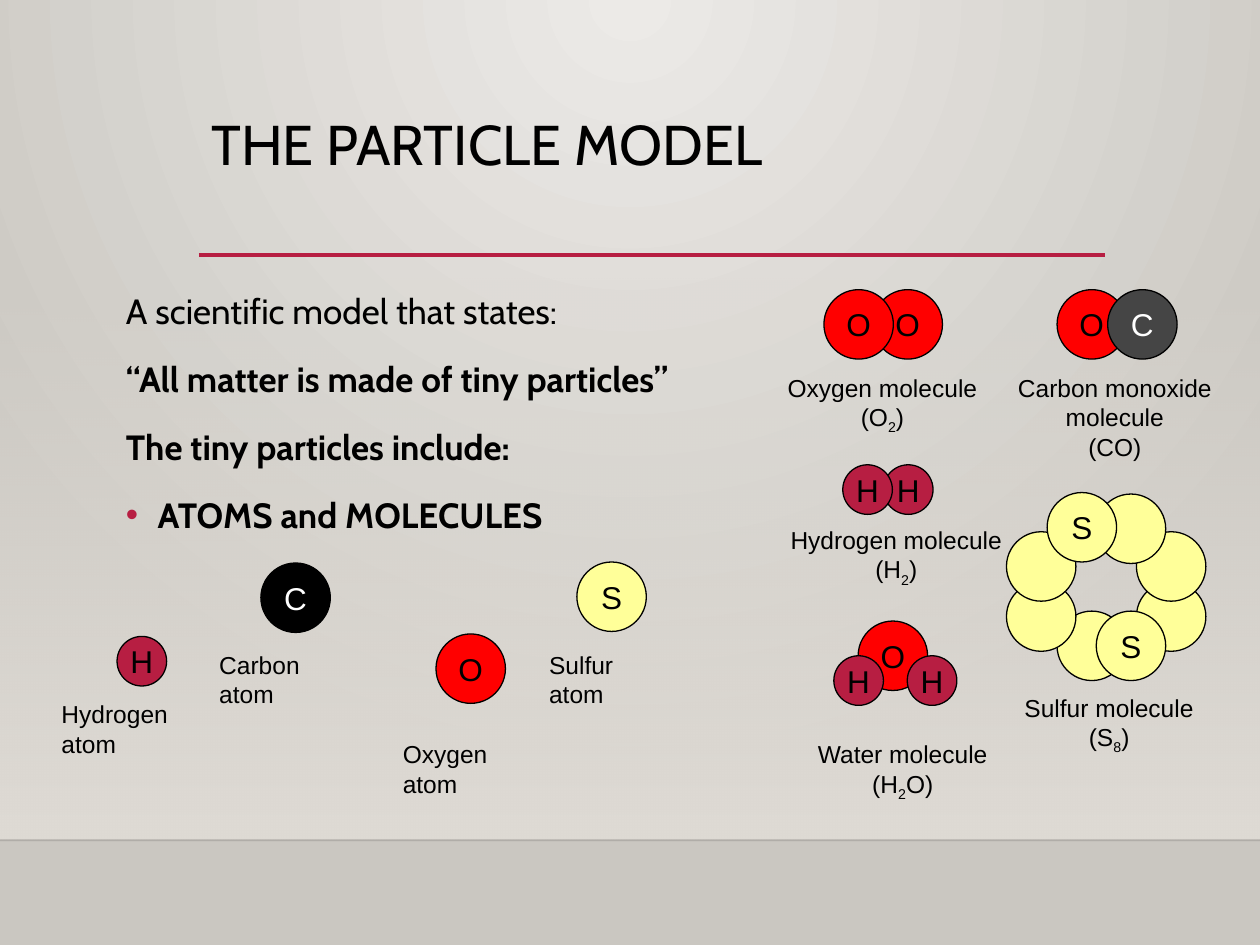
from dataclasses import dataclass

from pptx import Presentation
from pptx import util as u
from pptx.dml.color import RGBColor
from pptx.enum import shapes, text
from pptx.oxml import parse_xml
from pptx.oxml.ns import nsdecls, qn


@dataclass(frozen=True)
class Theme:
    ink: str = "000000"
    white: str = "FFFFFF"
    accent: str = "B71E42"
    red: str = "FF0000"
    yellow: str = "FFFF99"
    charcoal: str = "454545"
    glow: str = "ECEAE7"
    wall: str = "CAC7C1"
    floor: str = "DFDBD5"
    heading_font: str = "Cabin"
    label_font: str = "Arial"
    title_size: int = 32
    body_size: int = 20
    symbol_size: int = 18
    label_size: int = 14


@dataclass(frozen=True)
class Box:
    left: float
    top: float
    width: float
    height: float

    def lengths(self):
        return [u.Cm(value) for value in (self.left, self.top, self.width, self.height)]


@dataclass(frozen=True)
class Atom:
    symbol: str
    fill: str
    diameter: float = 1.4
    ink: str = "000000"


THEME = Theme()
HYDROGEN = Atom("H", THEME.accent, 1.0)
OXYGEN = Atom("O", THEME.red)
SULFUR = Atom("S", THEME.yellow)
PLAIN_SULFUR = Atom("", THEME.yellow)
CARBON = Atom("C", THEME.ink, ink=THEME.white)
BOUND_CARBON = Atom("C", THEME.charcoal, ink=THEME.white)

LEFT, CENTER = text.PP_ALIGN.LEFT, text.PP_ALIGN.CENTER
LINE_HEIGHT = 0.58
LABEL_PADDING = 0.29

FREE_ATOMS = [
    (Box(0.99, 12.83, 3.89, 2.59), HYDROGEN, 1.37, "Hydrogen atom"),
    (Box(4.17, 11.35, 3.35, 3.08), CARBON, 1.09, "Carbon atom"),
    (Box(7.87, 12.78, 3.43, 3.45), OXYGEN, 0.92, "Oxygen atom"),
    (Box(10.82, 11.33, 3.02, 3.1), SULFUR, 0.81, "Sulfur atom"),
]

MOLECULES = [
    (Box(15.29, 5.84, 5, 3), [(OXYGEN, 2.31, 0), (OXYGEN, 1.32, 0)],
     [["Oxygen molecule"], ["(O", "2", ")"]], 2),
    (Box(19.55, 5.84, 5.85, 3.58), [(OXYGEN, 1.76, 0), (BOUND_CARBON, 2.78, 0)],
     [["Carbon monoxide molecule"], ["(CO)"]], 3),
    (Box(15.57, 9.37, 5, 2.54), [(HYDROGEN, 2.24, 0), (HYDROGEN, 1.42, 0)],
     [["Hydrogen molecule"], ["(H", "2", ")"]], 2),
    (Box(16.03, 12.52, 4.34, 3.71),
     [(OXYGEN, 1.27, 0), (HYDROGEN, 0.78, 0.7), (HYDROGEN, 2.26, 0.7)],
     [["Water molecule"], ["(H", "2", "O)"]], 2),
    (Box(19.86, 9.93, 5, 5.36),
     [(PLAIN_SULFUR, 1.45, 2.39), (PLAIN_SULFUR, 3.05, 1.8), (SULFUR, 2.24, 2.39),
      (PLAIN_SULFUR, 0.43, 1.8), (PLAIN_SULFUR, 3.05, 0.79), (PLAIN_SULFUR, 2.24, 0.03),
      (PLAIN_SULFUR, 0.43, 0.79), (SULFUR, 1.25, 0)],
     [["Sulfur molecule"], ["(S", "8", ")"]], 2),
]

STATEMENTS = [
    ("A scientific model that states:", False),
    ("“All matter is made of tiny particles”", True),
    ("The tiny particles include:", True),
    ("ATOMS and MOLECULES", True),
]


def color(value):
    return RGBColor.from_string(value)


def add_span(para, words, font, size, ink=THEME.ink, bold=False):
    span = para.add_run()
    span.text = words
    span.font.name = font
    span.font.size = u.Pt(size)
    span.font.color.rgb = color(ink)
    span.font.bold = bold
    return span


def add_text_frame(page, box):
    frame = page.shapes.add_textbox(*box.lengths()).text_frame
    frame.word_wrap = True
    return frame


def paragraphs(frame, count):
    return [frame.paragraphs[0]] + [frame.add_paragraph() for _ in range(count - 1)]


def set_gradient(holder, stops, shade):
    marks = "".join(
        f'<a:gs pos="{place * 1000}"><a:srgbClr val="{value}">'
        f'<a:alpha val="{alpha * 1000}"/></a:srgbClr></a:gs>'
        for place, value, alpha in stops)
    gradient = parse_xml(
        f'<a:gradFill {nsdecls("a")} rotWithShape="1"><a:gsLst>{marks}</a:gsLst>{shade}</a:gradFill>')
    holder.replace(holder.find(qn("a:solidFill")), gradient)


def add_rule(page, left, right, top, ink, width):
    rule = page.shapes.add_connector(
        shapes.MSO_CONNECTOR.STRAIGHT, u.Cm(left), u.Cm(top), u.Cm(right), u.Cm(top))
    rule.line.color.rgb = color(ink)
    rule.line.width = u.Pt(width)
    rule._element.spPr.append(parse_xml(f'<a:effectLst {nsdecls("a")}/>'))
    return rule


def add_backdrop(page, box):
    page.background.fill.solid()
    set_gradient(
        page.element.find(".//" + qn("p:bgPr")),
        [(0, THEME.glow, 100), (100, THEME.wall, 100)],
        '<a:path path="circle"><a:fillToRect l="43000" t="0" r="43000" b="100000"/></a:path>')
    band = page.shapes.add_shape(shapes.MSO_SHAPE.RECTANGLE, *box.lengths())
    band.shadow.inherit = False
    band.line.fill.background()
    band.fill.solid()
    set_gradient(band._element.spPr, [(0, THEME.floor, 0), (100, THEME.floor, 100)],
                 '<a:lin ang="5400000" scaled="0"/>')
    edge = add_rule(page, box.left, box.left + box.width, box.top + box.height, THEME.ink, 1)
    tint = edge._element.find(".//" + qn("a:ln")).find(".//" + qn("a:srgbClr"))
    tint.append(parse_xml(f'<a:alpha {nsdecls("a")} val="20000"/>'))


def add_title(page, box):
    para = add_text_frame(page, box).paragraphs[0]
    para.line_spacing = 0.9
    add_span(para, "THE PARTICLE MODEL", THEME.heading_font, THEME.title_size)
    add_rule(page, box.left, box.left + box.width, box.top + box.height, THEME.accent, 2.5)


def add_statements(page, box):
    frame = add_text_frame(page, box)
    paras = paragraphs(frame, len(STATEMENTS))
    for index, (para, (words, bold)) in enumerate(zip(paras, STATEMENTS)):
        para.line_spacing = 1.2
        para.space_before = u.Pt(10 if index else 0)
        add_span(para, words, THEME.heading_font, THEME.body_size, bold=bold)
    layout = paras[-1]._p.get_or_add_pPr()
    layout.set("marL", str(u.Cm(0.64)))
    layout.set("indent", str(-u.Cm(0.64)))
    layout.append(parse_xml(
        f'<a:buClr {nsdecls("a")}><a:srgbClr val="{THEME.accent}"/></a:buClr>'))
    layout.append(parse_xml(f'<a:buFont {nsdecls("a")} typeface="Arial"/>'))
    layout.append(parse_xml(f'<a:buChar {nsdecls("a")} char="•"/>'))


def add_atom(page, atom, left, top):
    ball = page.shapes.add_shape(
        shapes.MSO_SHAPE.OVAL, *Box(left, top, atom.diameter, atom.diameter).lengths())
    ball.shadow.inherit = False
    ball.fill.solid()
    ball.fill.fore_color.rgb = color(atom.fill)
    ball.line.color.rgb = color(THEME.ink)
    ball.line.width = u.Pt(0.75)
    if atom.symbol:
        frame = ball.text_frame
        frame.word_wrap = False
        frame.vertical_anchor = text.MSO_ANCHOR.MIDDLE
        para = frame.paragraphs[0]
        para.alignment = CENTER
        add_span(para, atom.symbol, THEME.label_font, THEME.symbol_size, atom.ink)


def add_particle(page, box, atoms, label, line_count=2, alignment=CENTER, right_margin=0.25):
    height = line_count * LINE_HEIGHT + LABEL_PADDING
    frame = add_text_frame(page, Box(box.left, box.top + box.height - height, box.width, height))
    frame.margin_right = u.Cm(right_margin)
    for para, parts in zip(paragraphs(frame, len(label)), label):
        para.alignment = alignment
        for part in parts:
            span = add_span(para, part, THEME.label_font, THEME.label_size)
            if part.isdigit():
                span.font._element.set("baseline", "-25000")
    for atom, left, top in atoms:
        add_atom(page, atom, box.left + left, box.top + top)


def main():
    deck = Presentation()
    deck.slide_width, deck.slide_height = u.Cm(25.4), u.Cm(19.05)
    page = deck.slides.add_slide(deck.slide_layouts[6])
    add_backdrop(page, Box(0, 5.59, 25.4, 11.35))
    add_title(page, Box(4.01, 2.24, 18.26, 2.9))
    for box, atom, left, name in FREE_ATOMS:
        add_particle(page, box, [(atom, left, 0)], [[name]], alignment=LEFT, right_margin=1.14)
    for box, atoms, label, line_count in MOLECULES:
        add_particle(page, box, atoms, label, line_count)
    add_statements(page, Box(2.29, 5.54, 18.26, 9.58))
    deck.save("out.pptx")


if __name__ == "__main__":
    main()
